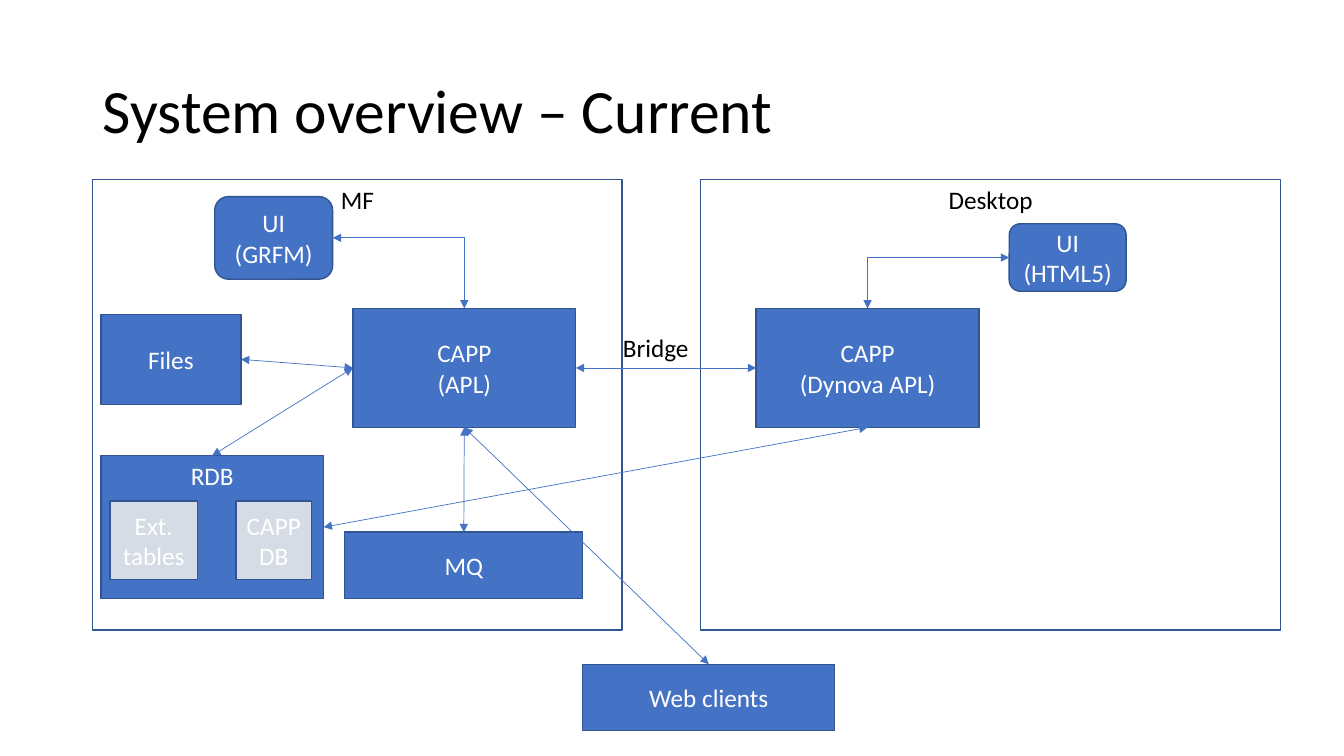
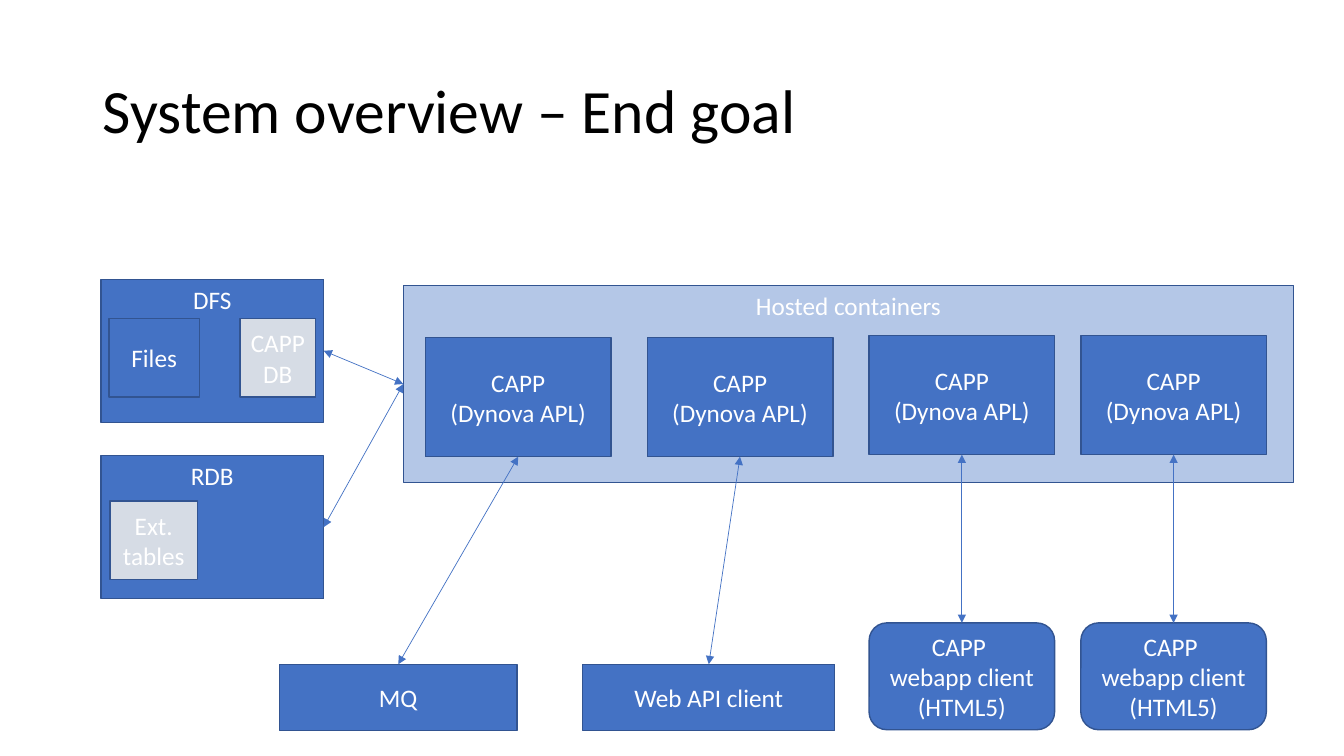
from lxml import etree
from pptx import Presentation
from pptx import util as u
from pptx.dml.color import RGBColor
from pptx.enum import shapes, text
from pptx.oxml.ns import qn

FONT = "Calibri"
BLUE, EDGE, PALE, GREY = "4472C4", "325491", "B4C7E7", "D6DCE5"
WHITE, BLACK = "FFFFFF", "000000"
BOX = shapes.MSO_SHAPE.FLOWCHART_PROCESS
RECT = shapes.MSO_SHAPE.RECTANGLE
ROUND = shapes.MSO_SHAPE.ROUNDED_RECTANGLE
TOP, LEFT, BOTTOM, RIGHT = range(4)

STYLES = {
    "frame": (BOX, WHITE, BLACK, "TOP"),
    "pool": (RECT, PALE, WHITE, "TOP"),
    "store": (BOX, BLUE, WHITE, "TOP"),
    "box": (BOX, BLUE, WHITE, "MIDDLE"),
    "part": (BOX, GREY, WHITE, "MIDDLE"),
    "service": (RECT, BLUE, WHITE, "MIDDLE"),
    "ui": (ROUND, BLUE, WHITE, "MIDDLE"),
}

STORE_X, STORE_W, STORE_H = 1, 2.21, 1.42
DB_Y, PART_H = 4.52, 0.78
APP_Y, APP_W, APP_H = 3.06, 2.21, 1.18
FRAME_Y, FRAME_H = 1.78, 4.47
CLIENT_Y, SERVICE_H = 6.59, 0.66
COLUMN_W = 1.84
COLUMNS = [(4.22, 3.35), (6.42, 3.35), (8.62, 3.33), (10.72, 3.33)]

DB = ("db", "RDB", "store", STORE_X, DB_Y, STORE_W, STORE_H)
TABLES = ("tables", "Ext. tables", "part", 1.09, 4.97, 0.87, PART_H)
APP_TEXT = "CAPP\n(Dynova APL)"
WEBAPP_TEXT = "CAPP \nwebapp client\n(HTML5)"

CURRENT = {
    "title": "System overview – Current",
    "boxes": [
        ("mf", "MF", "frame", 0.92, FRAME_Y, 5.25, FRAME_H),
        ("desktop", "Desktop", "frame", 6.95, FRAME_Y, 5.75, FRAME_H),
        ("app", "CAPP\n(APL)", "box", 3.5, APP_Y, APP_W, APP_H),
        ("new app", APP_TEXT, "box", 7.5, APP_Y, APP_W, APP_H),
        ("old ui", "UI (GRFM)", "ui", 2.13, 1.95, 1.17, 0.82),
        ("new ui", "UI (HTML5)", "ui", 10.01, 2.22, 1.16, 0.67),
        ("files", "Files", "box", STORE_X, 3.12, 1.39, 0.89),
        DB,
        TABLES,
        ("app db", "CAPP DB", "part", 2.34, 4.97, 0.75, PART_H),
        ("mq", "MQ", "service", 3.42, 5.28, 2.36, SERVICE_H),
        ("web", "Web clients", "service", 5.78, CLIENT_Y, 2.5, SERVICE_H),
    ],
    "links": [
        ("app", LEFT, "db", TOP),
        ("old ui", RIGHT, "app", TOP),
        ("app", BOTTOM, "mq", TOP),
        ("web", TOP, "app", BOTTOM),
        ("files", RIGHT, "app", LEFT),
        ("app", RIGHT, "new app", LEFT),
        ("new ui", LEFT, "new app", TOP),
        ("new app", BOTTOM, "db", RIGHT),
    ],
    "bent": ("old ui", "new ui"),
    "labels": [("Bridge", 6.08, 3.25, 1.17, 0.4)],
}

GOAL = {
    "title": "System overview – End goal",
    "boxes": [
        ("containers", "Hosted containers", "pool", 4, 2.83, 8.83, 1.96),
        ("dfs", "DFS", "store", STORE_X, 2.77, STORE_W, STORE_H),
        DB,
        ("files", "Files", "box", 1.08, 3.16, 0.9, PART_H),
        ("app db", "CAPP DB", "part", 2.38, 3.16, 0.75, PART_H),
        TABLES,
        ("mq", "MQ", "service", 2.77, CLIENT_Y, 2.36, SERVICE_H),
        ("api", "Web API client", "service", 5.78, CLIENT_Y, 2.5, SERVICE_H),
    ] + [
        (f"app {i}", APP_TEXT, "box", x, y, COLUMN_W, APP_H)
        for i, (x, y) in enumerate(COLUMNS)
    ] + [
        (f"webapp {i}", WEBAPP_TEXT, "ui", COLUMNS[i][0], 6.18, COLUMN_W, 1.06)
        for i in (2, 3)
    ],
    "links": [
        ("containers", LEFT, "dfs", RIGHT),
        ("containers", LEFT, "db", RIGHT),
    ] + [
        (f"app {i}", BOTTOM, client, TOP)
        for i, client in enumerate(("mq", "api", "webapp 2", "webapp 3"))
    ],
    "bent": (),
    "labels": [],
}


def rgb(value):
    return RGBColor.from_string(value)


def inches(*values):
    return [u.Inches(v) for v in values]


def format_text(tf, size, color, align, anchor):
    tf.word_wrap = True
    tf.vertical_anchor = anchor
    for p in tf.paragraphs:
        p.alignment = align
        for r in p.runs:
            r.font.name = FONT
            r.font.size = u.Pt(size)
            r.font.color.rgb = rgb(color)


def add_title(s, title):
    sp = s.shapes.title
    sp.left, sp.top, sp.width, sp.height = inches(0.92, 0.4, 11.5, 1.45)
    tf = sp.text_frame
    tf.text = title
    tf.paragraphs[0].line_spacing = 0.9
    format_text(tf, 44, BLACK, text.PP_ALIGN.LEFT, text.MSO_ANCHOR.MIDDLE)


def add_box(s, label, style, *place):
    kind, fill, color, anchor = STYLES[style]
    sp = s.shapes.add_shape(kind, *inches(*place))
    sp.shadow.inherit = False
    sp.fill.solid()
    sp.fill.fore_color.rgb = rgb(fill)
    sp.line.color.rgb = rgb(EDGE)
    sp.line.width = u.Pt(1)
    sp.text_frame.text = label
    format_text(sp.text_frame, 18, color, text.PP_ALIGN.CENTER,
                text.MSO_ANCHOR[anchor])
    return sp


def add_link(s, start, start_side, end, end_side, bent):
    kind = shapes.MSO_CONNECTOR.ELBOW if bent else shapes.MSO_CONNECTOR.STRAIGHT
    c = s.shapes.add_connector(kind, 0, 0, 0, 0)
    c.begin_connect(start, start_side)
    c.end_connect(end, end_side)
    c.line.color.rgb = rgb(BLUE)
    c.line.width = u.Pt(0.5)
    props = c.element.spPr
    if bent:
        props.find(qn("a:prstGeom")).set("prst", "bentConnector2")
    ln = props.find(qn("a:ln"))
    for tag in ("a:headEnd", "a:tailEnd"):
        etree.SubElement(ln, qn(tag), type="triangle")
    etree.SubElement(props, qn("a:effectLst"))


def add_label(s, label, *place):
    tf = s.shapes.add_textbox(*inches(*place)).text_frame
    tf.text = label
    format_text(tf, 18, BLACK, text.PP_ALIGN.LEFT, text.MSO_ANCHOR.TOP)


def build(prs, content):
    s = prs.slides.add_slide(prs.slide_layouts[5])
    add_title(s, content["title"])
    boxes = {name: add_box(s, *rest) for name, *rest in content["boxes"]}
    for start, start_side, end, end_side in content["links"]:
        add_link(s, boxes[start], start_side, boxes[end], end_side,
                 start in content["bent"])
    for label in content["labels"]:
        add_label(s, *label)


def main():
    prs = Presentation()
    prs.slide_width, prs.slide_height = inches(13.33, 7.5)
    for content in (CURRENT, GOAL):
        build(prs, content)
    prs.save("out.pptx")


if __name__ == "__main__":
    main()
